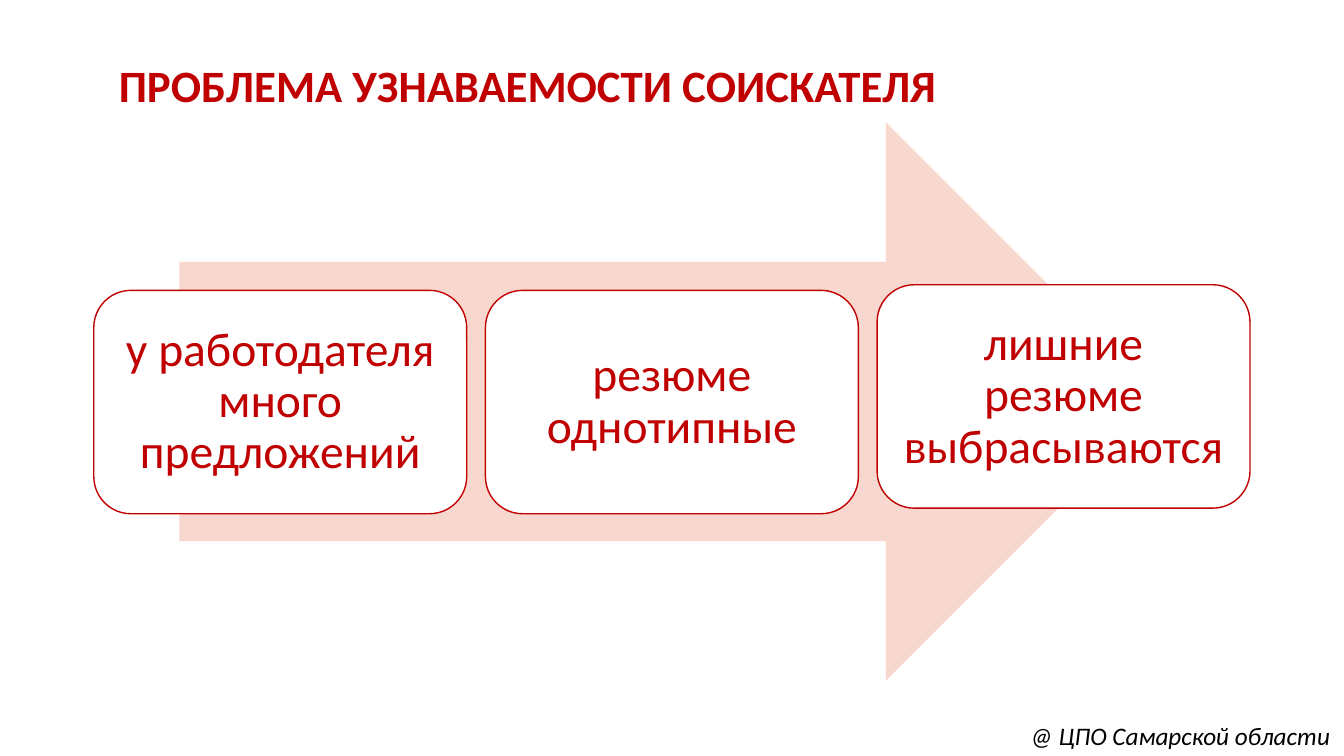
from dataclasses import dataclass

from pptx import Presentation
from pptx.dml.color import RGBColor
from pptx.enum.shapes import MSO_SHAPE as Shape
from pptx.enum.text import MSO_ANCHOR as Anchor, PP_ALIGN as Align
from pptx.shapes.autoshape import Shape as AutoShape
from pptx.slide import Slide
from pptx.text.text import TextFrame
from pptx.util import Pt


@dataclass(frozen=True)
class Theme:
    font: str = "Calibri"
    red: RGBColor = RGBColor(0xC0, 0x00, 0x00)
    pink: RGBColor = RGBColor(0xF8, 0xD7, 0xCE)
    white: RGBColor = RGBColor(0xFF, 0xFF, 0xFF)
    black: RGBColor = RGBColor(0x00, 0x00, 0x00)
    title_size: float = 32
    card_size: float = 34
    footer_size: float = 18


@dataclass(frozen=True)
class Box:
    left: float
    top: float
    width: float
    height: float

    def emu(self) -> tuple[Pt, Pt, Pt, Pt]:
        return Pt(self.left), Pt(self.top), Pt(self.width), Pt(self.height)


@dataclass(frozen=True)
class Card:
    text: str
    top: float


THEME = Theme()
TITLE_BOX = Box(77.8, 31, 828, 64)
FOOTER_BOX = Box(728.9, 511.2, 231.1, 28.8)
ARROW_BOX = Box(128.2, 87.4, 704, 398.9)
CARD_LEFT, CARD_PITCH, CARD_WIDTH, CARD_HEIGHT = 67, 279.75, 266.4, 159.6
CARD_INSET = 10
CARDS = [
    Card("у работодателя много предложений", 207.4),
    Card("резюме однотипные", 207.4),
    Card("лишние резюме выбрасываются", 203.4),
]


def write(tf: TextFrame, text: str, size: float, color: RGBColor,
          bold: bool = False, italic: bool = False, spacing: float = 1.0,
          align: Align = Align.LEFT) -> None:
    p = tf.paragraphs[0]
    p.alignment = align
    p.line_spacing = spacing
    r = p.add_run()
    r.text = text
    r.font.name = THEME.font
    r.font.size = Pt(size)
    r.font.bold = bold
    r.font.italic = italic
    r.font.color.rgb = color


def add_filled(s: Slide, kind: Shape, box: Box, fill: RGBColor) -> AutoShape:
    sp = s.shapes.add_shape(kind, *box.emu())
    sp.shadow.inherit = False
    sp.fill.solid()
    sp.fill.fore_color.rgb = fill
    sp.line.fill.background()
    return sp


def add_title(s: Slide) -> None:
    tf = s.shapes.add_textbox(*TITLE_BOX.emu()).text_frame
    tf.word_wrap = True
    tf.vertical_anchor = Anchor.MIDDLE
    write(tf, "ПРОБЛЕМА УЗНАВАЕМОСТИ СОИСКАТЕЛЯ", THEME.title_size,
          THEME.red, bold=True, spacing=0.9)


def add_footer(s: Slide) -> None:
    tf = s.shapes.add_textbox(*FOOTER_BOX.emu()).text_frame
    tf.word_wrap = False
    write(tf, "@ ЦПО Самарской области", THEME.footer_size,
          THEME.black, italic=True)


def add_card(s: Slide, index: int, card: Card) -> None:
    box = Box(CARD_LEFT + index * CARD_PITCH, card.top, CARD_WIDTH, CARD_HEIGHT)
    sp = add_filled(s, Shape.ROUNDED_RECTANGLE, box, THEME.white)
    sp.line.color.rgb = THEME.red
    sp.line.width = Pt(1)
    tf = sp.text_frame
    tf.word_wrap = True
    tf.vertical_anchor = Anchor.MIDDLE
    tf.margin_left = tf.margin_right = Pt(CARD_INSET)
    tf.margin_top = tf.margin_bottom = Pt(CARD_INSET)
    write(tf, card.text, THEME.card_size, THEME.red, spacing=0.9,
          align=Align.CENTER)


def main() -> None:
    prs = Presentation()
    prs.slide_width, prs.slide_height = Pt(960), Pt(540)
    s = prs.slides.add_slide(prs.slide_layouts[6])
    add_title(s)
    add_footer(s)
    add_filled(s, Shape.RIGHT_ARROW, ARROW_BOX, THEME.pink)
    for index, card in enumerate(CARDS):
        add_card(s, index, card)
    prs.save("out.pptx")


if __name__ == "__main__":
    main()
